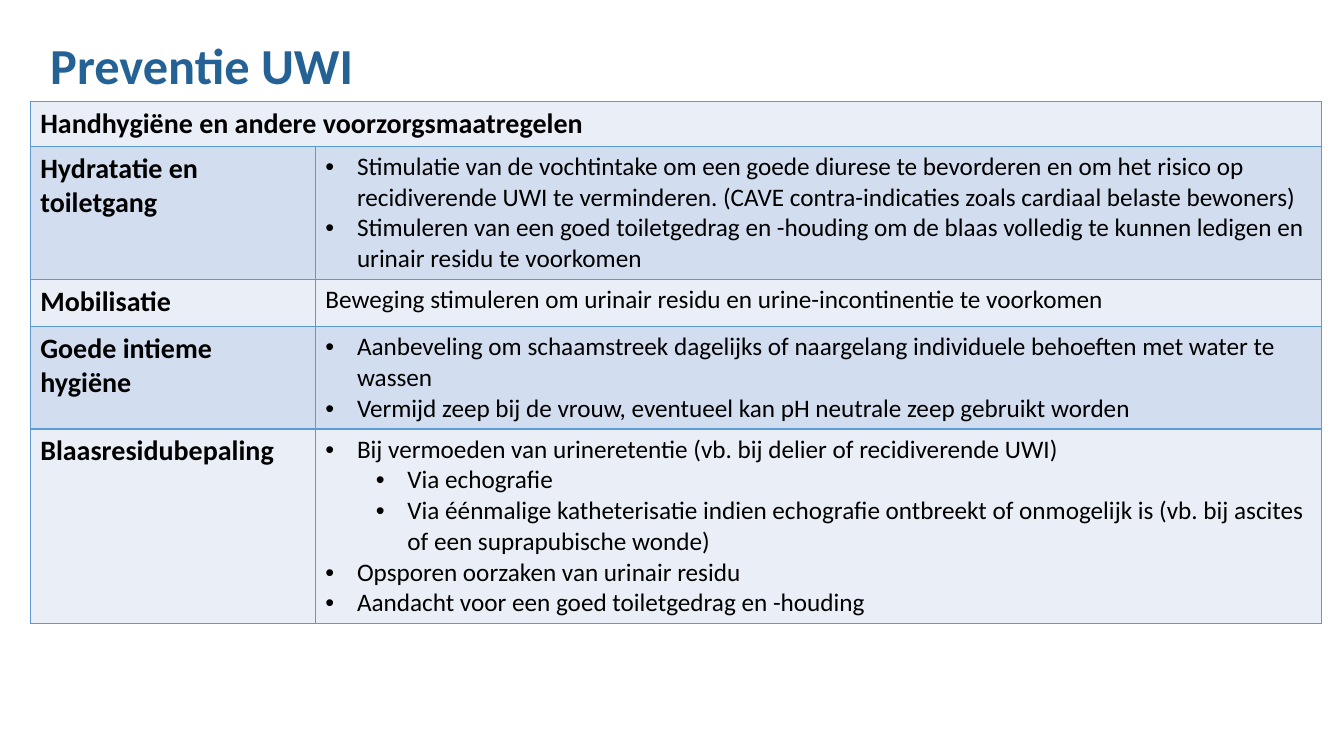
from dataclasses import dataclass

from lxml.etree import SubElement
from pptx import Presentation
from pptx.dml.color import RGBColor
from pptx.enum.text import MSO_ANCHOR
from pptx.oxml.ns import qn
from pptx.util import Pt


@dataclass(frozen=True)
class Theme:
    font: str = "Calibri"
    title: str = "246194"
    text: str = "000000"
    border: str = "5B9BD5"
    bands: tuple = ("EAEFF7", "D2DEEF")
    title_size: int = 36
    label_size: int = 20
    body_size: int = 18


theme = Theme()


def add_run(p, text, size, color=theme.text, bold=False):
    r = p.add_run()
    r.text = text
    r.font.name = theme.font
    r.font.size = Pt(size)
    r.font.bold = bold
    r.font.color.rgb = RGBColor.from_string(color)


def style_cell(cell, fill):
    tc_pr = cell._tc.get_or_add_tcPr()
    for side in ("a:lnL", "a:lnR", "a:lnT", "a:lnB"):
        ln = SubElement(tc_pr, qn(side), w=str(Pt(1)))
        solid = SubElement(ln, qn("a:solidFill"))
        SubElement(solid, qn("a:srgbClr"), val=theme.border)
    cell.fill.solid()
    cell.fill.fore_color.rgb = RGBColor.from_string(fill)


# Each row: height, label, body paragraphs as (level, text); None is unbulleted
rows = [
    (32, "Handhygiëne en andere voorzorgsmaatregelen", []),
    (95, "Hydratatie en toiletgang", [
        (0, "Stimulatie van de vochtintake om een goede diurese te bevorderen en om het "
            "risico op recidiverende UWI te verminderen. (CAVE contra-indicaties zoals "
            "cardiaal belaste bewoners)"),
        (0, "Stimuleren van een goed toiletgedrag en -houding om de blaas volledig te "
            "kunnen ledigen en urinair residu te voorkomen"),
    ]),
    (34, "Mobilisatie", [
        (None, "Beweging stimuleren om urinair residu en urine-incontinentie te voorkomen"),
    ]),
    (73, "Goede intieme hygiëne", [
        (0, "Aanbeveling om schaamstreek dagelijks of naargelang individuele behoeften "
            "met water te wassen"),
        (0, "Vermijd zeep bij de vrouw, eventueel kan pH neutrale zeep gebruikt worden"),
    ]),
    (139, "Blaasresidubepaling", [
        (0, "Bij vermoeden van urineretentie (vb. bij delier of recidiverende UWI)"),
        (1, "Via echografie"),
        (1, "Via éénmalige katheterisatie indien echografie ontbreekt of onmogelijk is "
            "(vb. bij ascites of een suprapubische wonde)"),
        (0, "Opsporen oorzaken van urinair residu"),
        (0, "Aandacht voor een goed toiletgedrag en -houding"),
    ]),
]

prs = Presentation()
prs.slide_width, prs.slide_height = Pt(960), Pt(540)
s = prs.slides.add_slide(prs.slide_layouts[6])

# Title
tf = s.shapes.add_textbox(Pt(28.8), Pt(24.5), Pt(877), Pt(47.5)).text_frame
tf.word_wrap = True
tf.vertical_anchor = MSO_ANCHOR.BOTTOM
p = tf.paragraphs[0]
p.line_spacing = 0.9
add_run(p, "Preventie UWI", theme.title_size, theme.title, bold=True)

# Table
height = sum(row[0] for row in rows)
table = s.shapes.add_table(len(rows), 2, Pt(21.6), Pt(72.5), Pt(922.3), Pt(height)).table
table.columns[0].width, table.columns[1].width = Pt(203.7), Pt(718.6)
table.cell(0, 0).merge(table.cell(0, 1))

for i, (row_height, label, items) in enumerate(rows):
    table.rows[i].height = Pt(row_height)
    label_cell, body_cell = table.cell(i, 0), table.cell(i, 1)
    for cell in (label_cell, body_cell):
        style_cell(cell, theme.bands[i % 2])
    add_run(label_cell.text_frame.paragraphs[0], label, theme.label_size, bold=True)

    # Body paragraphs with hanging bullets
    tf = body_cell.text_frame
    for j, (level, text) in enumerate(items):
        p = tf.add_paragraph() if j else tf.paragraphs[0]
        if level is not None:
            p.level = level
            p_pr = p._p.get_or_add_pPr()
            p_pr.set("marL", str(Pt(22.5 + 36 * level)))
            p_pr.set("indent", str(-Pt(22.5)))
            SubElement(p_pr, qn("a:buFont"), typeface="Arial")
            SubElement(p_pr, qn("a:buChar"), char="•")
        add_run(p, text, theme.body_size)

prs.save("out.pptx")
